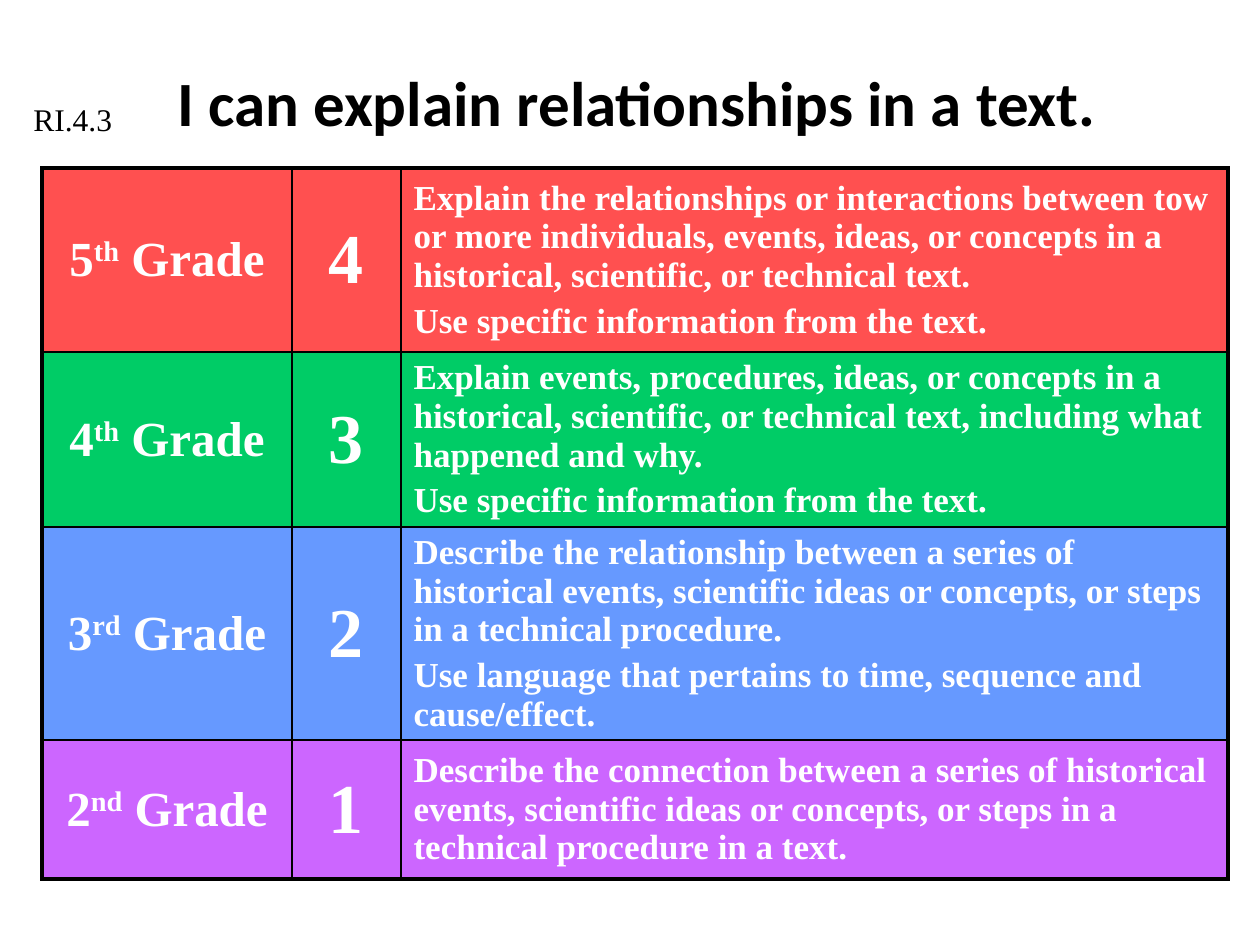
from lxml import etree
from pptx import Presentation
from pptx.dml.color import RGBColor
from pptx.enum.text import MSO_ANCHOR, PP_ALIGN
from pptx.oxml.ns import qn
from pptx.util import Pt

PX = 914400 / 126
LEFT, CENTER = PP_ALIGN.LEFT, PP_ALIGN.CENTER
MIDDLE = MSO_ANCHOR.MIDDLE

THEME = {
    "heading": "Calibri", "body": "Times New Roman",
    "ink": "000000", "white": "FFFFFF",
    "title": 36, "code": 18, "grade": 28, "score": 40, "skill": 20,
}


def px(length):
    return round(length * PX)


def write(frame, *paragraphs, size, font=THEME["body"], color=THEME["white"],
          bold=True, align=LEFT, gap=0, leading=None):
    frame.word_wrap = True
    for index, parts in enumerate(paragraphs):
        paragraph = frame.paragraphs[0] if index == 0 else frame.add_paragraph()
        paragraph.alignment = align
        if leading:
            paragraph.line_spacing = Pt(leading)
        if index:
            paragraph.space_before = Pt(gap)
        for text, baseline in parts:
            run = paragraph.add_run()
            run.text = text
            run.font.name = font
            run.font.size = Pt(size)
            run.font.bold = bold
            run.font.color.rgb = RGBColor.from_string(color)
            if baseline:
                run._r.get_or_add_rPr().set("baseline", str(baseline * 1000))


prs = Presentation()
prs.slide_width, prs.slide_height = px(1260), px(945)
slide = prs.slides.add_slide(prs.slide_layouts[6])

title = slide.shapes.add_textbox(px(14), px(63), px(1246), px(77)).text_frame
title.margin_top = title.margin_bottom = 0
title.vertical_anchor = MIDDLE
write(title, [("I can explain relationships in a text.", 0)], size=THEME["title"],
      font=THEME["heading"], color=THEME["ink"], align=CENTER)

levels = [
    ("5", "th", "4", "FF5050", 184, [
        "Explain the relationships or interactions between tow or more individuals, "
        "events, ideas, or concepts in a historical, scientific, or technical text.",
        "Use specific information from the text."]),
    ("4", "th", "3", "00CC66", 175, [
        "Explain events, procedures, ideas, or concepts in a historical, scientific, "
        "or technical text, including what happened and why.",
        "Use specific information from the text."]),
    ("3", "rd", "2", "6699FF", 213, [
        "Describe the relationship between a series of historical events, scientific "
        "ideas or concepts, or steps in a technical procedure.",
        "Use language that pertains to time, sequence and cause/effect."]),
    ("2", "nd", "1", "CC66FF", 139, [
        "Describe the connection between a series of historical events, scientific "
        "ideas or concepts, or steps in a technical procedure in a text."]),
]
column_widths = [250, 109, 827]
row_rules = [[2.25] * 3, [1.5] * 3, [1, 1, 1.5], [1, 1, 1.5], [2.25] * 3]
column_rules = [[2.25, 1, 1, 2.25]] * 2 + [[2.25, 1.5, 1.5, 2.25], [2.25, 1, 1, 2.25]]

rubric = slide.shapes.add_table(
    len(levels), len(column_widths), px(42), px(168),
    px(sum(column_widths)), px(sum(level[4] for level in levels))).table
rubric.first_row = rubric.horz_banding = False
for column, width in zip(rubric.columns, column_widths):
    column.width = px(width)

for r, (grade, ordinal, score, color, height, skills) in enumerate(levels):
    rubric.rows[r].height = px(height)
    grade_cell, score_cell, skill_cell = cells = [rubric.cell(r, c) for c in range(3)]
    write(grade_cell.text_frame, [(grade, 0), (ordinal, 30), (" Grade", 0)],
          size=THEME["grade"], align=CENTER)
    write(score_cell.text_frame, [(score, 0)], size=THEME["score"], align=CENTER)
    write(skill_cell.text_frame, *[[(skill, 0)] for skill in skills],
          size=THEME["skill"], gap=4, leading=22.1)
    for c, cell in enumerate(cells):
        cell.vertical_anchor = MIDDLE
        cell.margin_top = cell.margin_bottom = 0
        borders = {"a:lnL": column_rules[r][c], "a:lnR": column_rules[r][c + 1],
                   "a:lnT": row_rules[r][c], "a:lnB": row_rules[r + 1][c]}
        for tag, weight in borders.items():
            line = etree.SubElement(cell._tc.get_or_add_tcPr(), qn(tag), w=str(Pt(weight)))
            ink = etree.SubElement(line, qn("a:solidFill"))
            etree.SubElement(ink, qn("a:srgbClr"), val=THEME["ink"])
        cell.fill.solid()
        cell.fill.fore_color.rgb = RGBColor.from_string(color)

standard = slide.shapes.add_textbox(px(21), px(94), px(179), px(50)).text_frame
write(standard, [("RI.4.3", 0)], size=THEME["code"], color=THEME["ink"], bold=False)

prs.save("out.pptx")
